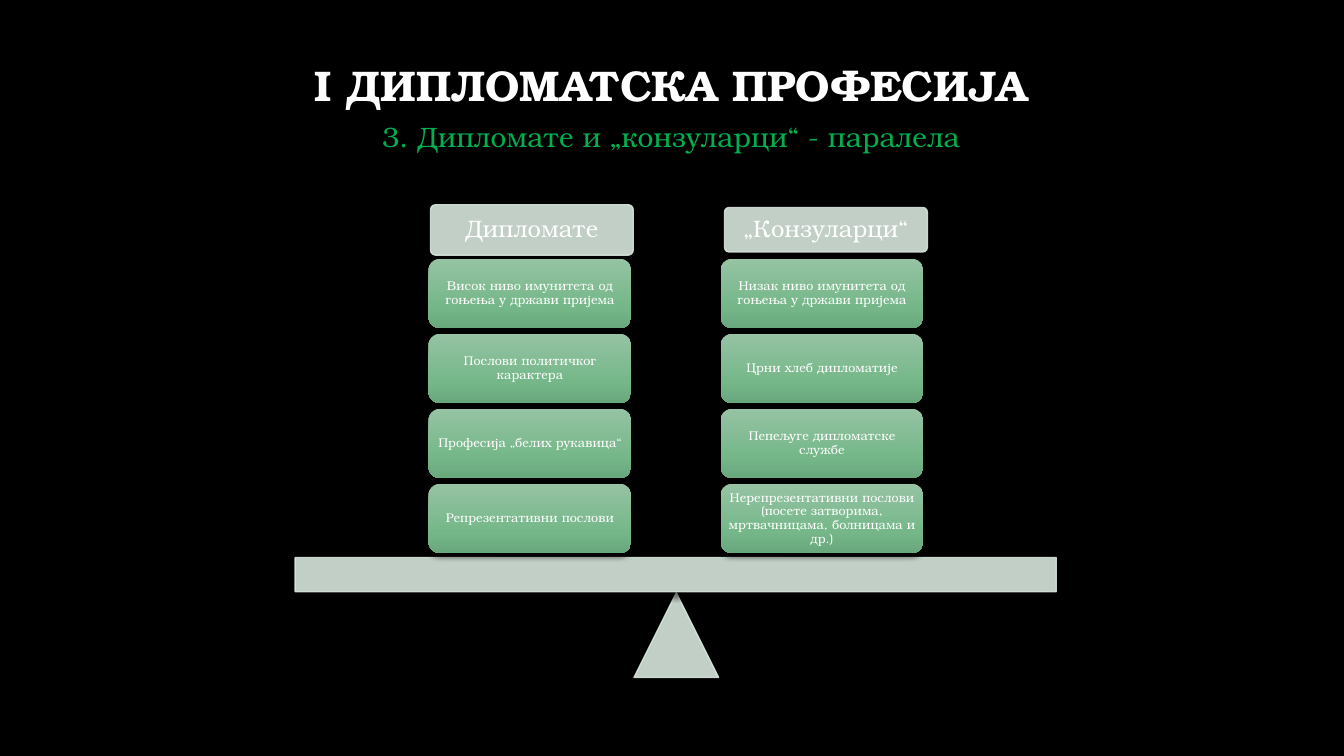
from dataclasses import dataclass

from lxml.etree import SubElement
from pptx import Presentation
from pptx.dml.color import RGBColor
from pptx.enum.shapes import MSO_SHAPE as Shape
from pptx.enum.text import MSO_ANCHOR as Anchor, MSO_AUTO_SIZE as AutoSize, PP_ALIGN as Align
from pptx.oxml.ns import qn
from pptx.util import Cm, Pt


@dataclass(frozen=True)
class Theme:
    font: str = "TeX Gyre Bonum"
    background: str = "000000"
    text: str = "FFFFFF"
    accent: str = "00B050"
    pale: str = "D8E6DC"
    shadow: str = "000000"
    card_stops: tuple = ((0, "95C3A3"), (69, "75B789"), (100, "69A87C"))
    title_size: float = 30.6
    subtitle_size: float = 20
    header_size: float = 17
    card_size: float = 9


COLUMNS = [
    {
        "header": "Дипломате",
        "header_box": (10.85, 5.16, 5.11, 1.27),
        "left": 10.8,
        "cards": [
            "Висок ниво имунитета од гоњења у држави пријема",
            "Послови политичког карактера",
            "Професија „белих рукавица“",
            "Репрезентативни послови",
        ],
    },
    {
        "header": "„Конзуларци“",
        "header_box": (18.26, 5.23, 5.11, 1.12),
        "left": 18.16,
        "cards": [
            "Низак ниво имунитета од гоњења у држави пријема",
            "Црни хлеб дипломатије",
            "Пепељуге дипломатске службе",
            "Нерепрезентативни послови (посете затворима, мртвачницама, болницама и др.)",
        ],
    },
]
CARD_TOP, CARD_STEP = 6.52, 1.89
CARD_WIDTH, CARD_HEIGHT = 5.11, 1.75


def set_all(target, values):
    for name, value in values.items():
        setattr(target, name, value)


def add_alpha(color_parent, percent):
    """Make the solid colour inside color_parent partly transparent."""
    color = color_parent.find(f".//{qn('a:srgbClr')}")
    SubElement(color, qn("a:alpha"), val=str(percent * 1000))


class SlideBuilder:
    def __init__(self, deck, theme):
        self.theme = theme
        self.page = deck.slides.add_slide(deck.slide_layouts[5])
        fill = self.page.background.fill
        fill.solid()
        fill.fore_color.rgb = RGBColor.from_string(theme.background)

    def put_text(self, box, text, size, color=None, bold=False, spacing=0.9, inset=None):
        frame = box.text_frame
        set_all(frame, {"word_wrap": True, "auto_size": AutoSize.NONE,
                        "vertical_anchor": Anchor.MIDDLE})
        if inset is not None:
            sides = ("left", "top", "right", "bottom")
            set_all(frame, {f"margin_{side}": Cm(inset) for side in sides})
        para = frame.paragraphs[0]
        set_all(para, {"alignment": Align.CENTER, "line_spacing": spacing,
                       "space_before": Pt(0)})
        span = para.add_run()
        span.text = text
        set_all(span.font, {"name": self.theme.font, "size": Pt(size), "bold": bold})
        span.font.color.rgb = RGBColor.from_string(color or self.theme.text)

    def title(self, text, place):
        box = self.page.shapes.title
        set_all(box, dict(zip(("left", "top", "width", "height"), map(Cm, place))))
        self.put_text(box, text, self.theme.title_size, bold=True)

    def subtitle(self, text, place):
        box = self.page.shapes.add_textbox(*map(Cm, place))
        self.put_text(box, text, self.theme.subtitle_size, self.theme.accent, spacing=1.2)
        box.text_frame.vertical_anchor = Anchor.TOP
        box.text_frame.paragraphs[0].space_before = Pt(10)

    def shadowed(self, kind, place):
        box = self.page.shapes.add_shape(kind, *map(Cm, place))
        box.shadow.inherit = False
        effects = box._element.spPr.find(qn("a:effectLst"))
        shadow = SubElement(effects, qn("a:outerShdw"), blurRad=str(Pt(4)),
                            dist=str(Pt(3)), dir="5400000", rotWithShape="0")
        SubElement(shadow, qn("a:srgbClr"), val=self.theme.shadow)
        add_alpha(shadow, 54)
        return box

    def pale_shape(self, kind, place):
        box = self.shadowed(kind, place)
        pale = RGBColor.from_string(self.theme.pale)
        box.fill.solid()
        box.fill.fore_color.rgb = pale
        box.line.width = Pt(1)
        box.line.color.rgb = pale
        properties = box._element.spPr
        for tag in ("a:solidFill", "a:ln"):
            add_alpha(properties.find(qn(tag)), 90)
        return box

    def header(self, text, place):
        box = self.pale_shape(Shape.ROUNDED_RECTANGLE, place)
        box.adjustments[0] = 0.1
        self.put_text(box, text, self.theme.header_size, inset=0.18)

    def card(self, text, place):
        box = self.shadowed(Shape.ROUNDED_RECTANGLE, place)
        box.line.fill.background()
        box.fill.gradient()
        gradient = box._element.spPr.find(qn("a:gradFill"))
        for child in list(gradient):
            gradient.remove(child)
        stops = SubElement(gradient, qn("a:gsLst"))
        for position, color in self.theme.card_stops:
            stop = SubElement(stops, qn("a:gs"), pos=str(position * 1000))
            SubElement(stop, qn("a:srgbClr"), val=color)
        SubElement(gradient, qn("a:lin"), ang="5400000", scaled="0")
        self.put_text(box, text, self.theme.card_size, inset=0.1)


def main():
    deck = Presentation()
    set_all(deck, {"slide_width": Cm(33.87), "slide_height": Cm(19.05)})
    slide = SlideBuilder(deck, Theme())
    slide.title("I ДИПЛОМАТСКА ПРОФЕСИЈА", (2.54, 1.7, 28.75, 1.04))
    slide.subtitle("3. Дипломате и „конзуларци“ - паралела", (2.54, 2.72, 28.75, 13.36))
    for column in COLUMNS:
        slide.header(column["header"], column["header_box"])
    slide.pale_shape(Shape.ISOSCELES_TRIANGLE, (15.98, 14.94, 2.13, 2.13))
    slide.pale_shape(Shape.RECTANGLE, (7.44, 14.05, 19.18, 0.86))
    for column in COLUMNS:
        for row, text in enumerate(column["cards"]):
            top = CARD_TOP + row * CARD_STEP
            slide.card(text, (column["left"], top, CARD_WIDTH, CARD_HEIGHT))
    deck.save("out.pptx")


if __name__ == "__main__":
    main()
